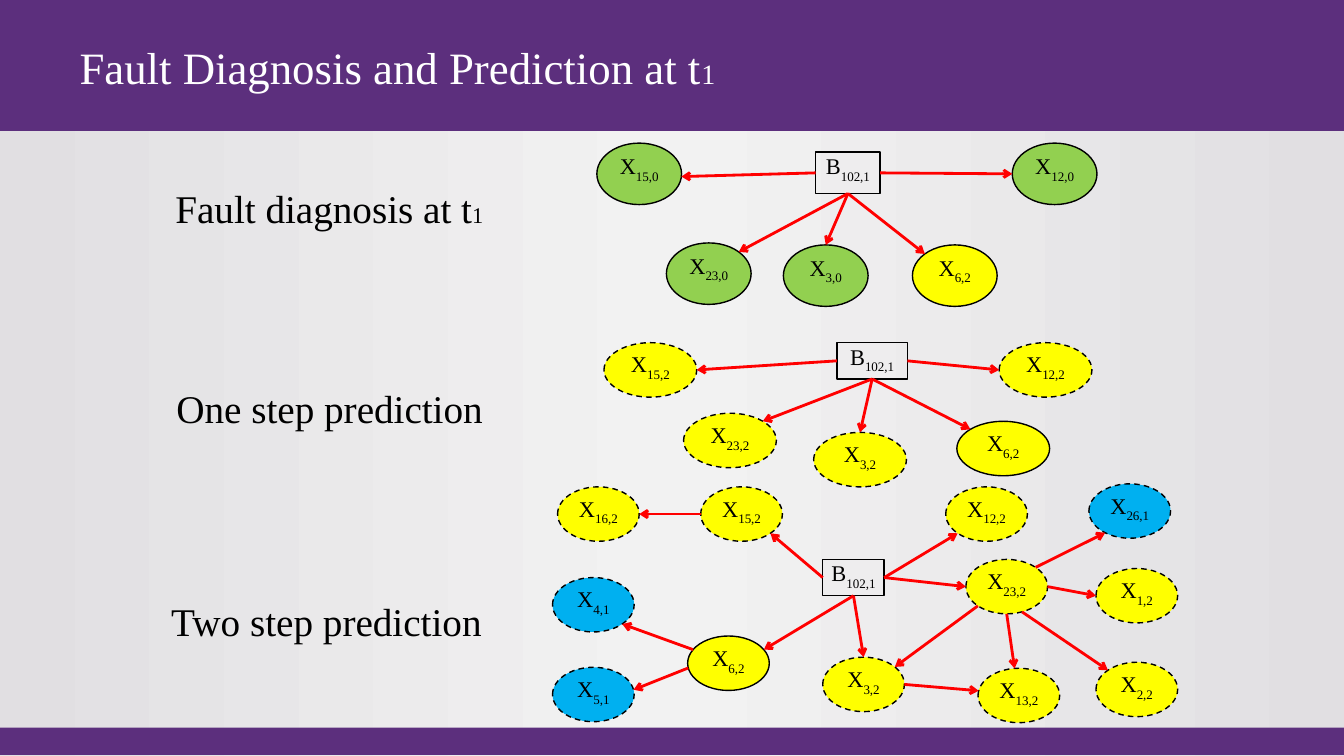
from copy import deepcopy
from dataclasses import dataclass
from math import cos, radians, sin

from lxml.etree import SubElement
from pptx import Presentation
from pptx.dml.color import RGBColor
from pptx.enum.dml import MSO_LINE_DASH_STYLE as Dash
from pptx.enum.shapes import MSO_CONNECTOR as Connector, MSO_SHAPE as Preset
from pptx.enum.text import MSO_ANCHOR as Anchor, PP_ALIGN as Align
from pptx.oxml.ns import qn
from pptx.shapes.autoshape import Shape
from pptx.util import Inches, Pt

PURPLE, BLACK, WHITE, RED = "5C2F7D", "000000", "FFFFFF", "FF0000"
GREEN, YELLOW, BLUE = "92D050", "FFFF00", "00B0F0"
BACKGROUND_STOPS = [(0, "E1DFE2"), (0.5, "F2F2F2"), (1, "E1DFE2")]
NODE_FRAME = dict(margin_left=0, margin_top=0, margin_right=0, margin_bottom=0,
                  vertical_anchor=Anchor.TOP, word_wrap=True)
HUB = "102,1"
HUB_SIDES = {270: 0, 180: 1, 90: 2, 0: 3}


@dataclass
class Heading:
    text: str
    left: float
    top: float
    width: float
    height: float = 0.57
    size: int = 28
    index: str = ""
    index_size: int = 16
    color: str = BLACK


@dataclass
class Node:
    index: str
    left: float
    top: float
    fill: str = YELLOW
    dashed: bool = True


@dataclass
class Arrow:
    """Angles are in degrees, clockwise from the right-hand side."""
    source: str
    leaving: float
    target: str
    arriving: float


@dataclass
class Network:
    hub: tuple[float, float, float, float]
    node_size: tuple[float, float]
    nodes: list[Node]
    arrows: list[Arrow]


HEADINGS = [
    Heading("Fault diagnosis at t", 1.64, 1.78, 3.45, index="1"),
    Heading("One step prediction", 1.65, 3.76, 3.32),
    Heading("Two step prediction", 1.6, 5.88, 3.65),
    Heading("Fault Diagnosis and Prediction at t", 0.69, 0.34, 7.02, 0.64,
            32, "1", 20, WHITE),
]

NETWORKS = [
    Network(
        (8.09, 1.51, 0.64, 0.41), (0.84, 0.61),
        [Node("15,0", 5.92, 1.42, GREEN, False),
         Node("12,0", 10.04, 1.42, GREEN, False),
         Node("6,2", 9.05, 2.43, YELLOW, False),
         Node("23,0", 6.61, 2.41, GREEN, False),
         Node("3,0", 7.77, 2.43, GREEN, False)],
        [Arrow(HUB, 180, "15,0", 5), Arrow(HUB, 0, "12,0", 180),
         Arrow(HUB, 90, "23,0", 315), Arrow(HUB, 90, "6,2", 225),
         Arrow(HUB, 90, "3,0", 270)]),
    Network(
        (8.3, 3.4, 0.7, 0.36), (0.92, 0.54),
        [Node("15,2", 5.99, 3.4), Node("12,2", 9.91, 3.4),
         Node("23,2", 6.78, 4.1), Node("6,2", 9.49, 4.18, dashed=False),
         Node("3,2", 8.07, 4.29)],
        [Arrow(HUB, 180, "15,2", 0), Arrow(HUB, 0, "12,2", 180),
         Arrow(HUB, 90, "23,2", 315), Arrow(HUB, 90, "6,2", 225),
         Arrow(HUB, 90, "3,2", 270)]),
    Network(
        (8.16, 5.55, 0.61, 0.36), (0.81, 0.54),
        [Node("4,1", 5.48, 5.73, BLUE), Node("5,1", 5.48, 6.62, BLUE),
         Node("6,2", 6.82, 6.31, dashed=False), Node("15,2", 6.95, 4.83),
         Node("23,2", 9.58, 5.55), Node("3,2", 8.16, 6.52),
         Node("12,2", 9.38, 4.83), Node("26,1", 10.8, 4.8, BLUE),
         Node("16,2", 5.53, 4.83), Node("1,2", 10.87, 5.64),
         Node("13,2", 9.7, 6.63), Node("2,2", 10.87, 6.57)],
        [Arrow(HUB, 90, "6,2", 330), Arrow(HUB, 180, "15,2", 45),
         Arrow(HUB, 0, "23,2", 180), Arrow(HUB, 0, "12,2", 135),
         Arrow(HUB, 90, "3,2", 270), Arrow("15,2", 180, "16,2", 0),
         Arrow("6,2", 170, "5,1", 350), Arrow("6,2", 210, "4,1", 45),
         Arrow("23,2", 315, "26,1", 127), Arrow("23,2", 0, "1,2", 180),
         Arrow("23,2", 135, "3,2", 320), Arrow("23,2", 68, "2,2", 225),
         Arrow("23,2", 90, "13,2", 264), Arrow("3,2", 0, "13,2", 190)]),
]


def rgb(color: str) -> RGBColor:
    return RGBColor.from_string(color)


def add_run(paragraph, text: str, size: int, color: str = BLACK):
    run = paragraph.add_run()
    run.text = text
    for name, value in dict(name="Times New Roman", size=Pt(size)).items():
        setattr(run.font, name, value)
    run.font.color.rgb = rgb(color)
    return run


def paint_background(slide) -> None:
    fill = slide.background.fill
    fill.gradient()
    fill.gradient_angle = 0
    stops = slide.element.find(".//" + qn("a:gsLst"))
    stops.append(deepcopy(stops[0]))
    for stop, (position, color) in zip(fill.gradient_stops, BACKGROUND_STOPS):
        stop.position = position
        stop.color.rgb = rgb(color)


def add_band(slide, top: float, height: float) -> None:
    band = slide.shapes.add_shape(Preset.RECTANGLE, 0, Inches(top),
                                  Inches(13.33), Inches(height))
    band.shadow.inherit = False
    band.fill.solid()
    band.fill.fore_color.rgb = rgb(PURPLE)
    band.line.fill.background()


def add_heading(slide, heading: Heading) -> None:
    place = (heading.left, heading.top, heading.width, heading.height)
    frame = slide.shapes.add_textbox(*map(Inches, place)).text_frame
    frame.word_wrap = True
    add_run(frame.paragraphs[0], heading.text, heading.size, heading.color)
    if heading.index:
        add_run(frame.paragraphs[0], heading.index, heading.index_size, heading.color)


def add_variable(group, preset, place: tuple, letter: str, index: str,
                 fill: str = "", dashed: bool = False) -> Shape:
    variable = group.shapes.add_shape(preset, *map(Inches, place))
    variable.shadow.inherit = False
    if fill:
        variable.fill.solid()
        variable.fill.fore_color.rgb = rgb(fill)
    else:
        variable.fill.background()
    variable.line.color.rgb = rgb(BLACK)
    variable.line.width = Pt(1)
    if dashed:
        variable.line.dash_style = Dash.DASH
    for name, value in NODE_FRAME.items():
        setattr(variable.text_frame, name, value)
    paragraph = variable.text_frame.paragraphs[0]
    paragraph.alignment = Align.CENTER
    add_run(paragraph, letter, 16)
    add_run(paragraph, index, 16).font._element.set("baseline", "-30000")
    return variable


def rim_point(variable: Shape, angle: float) -> tuple[int, int]:
    turn = radians(angle)
    return (round(variable.left + variable.width * (1 + cos(turn)) / 2),
            round(variable.top + variable.height * (1 + sin(turn)) / 2))


def add_arrow(group, variables: dict[str, Shape], arrow: Arrow) -> None:
    source, target = variables[arrow.source], variables[arrow.target]
    link = group.shapes.add_connector(
        Connector.STRAIGHT, *rim_point(source, arrow.leaving),
        *rim_point(target, arrow.arriving))
    if arrow.source == HUB:
        link.begin_connect(source, HUB_SIDES[arrow.leaving])
    link.line.color.rgb = rgb(RED)
    link.line.width = Pt(2)
    SubElement(link.line._get_or_add_ln(), qn("a:tailEnd"), type="arrow")
    SubElement(link._element.spPr, qn("a:effectLst"))


def add_network(slide, network: Network) -> None:
    group = slide.shapes.add_group_shape()
    variables = {HUB: add_variable(group, Preset.RECTANGLE, network.hub, "B", HUB)}
    for node in network.nodes:
        variables[node.index] = add_variable(
            group, Preset.OVAL, (node.left, node.top, *network.node_size),
            "X", node.index, node.fill, node.dashed)
    for arrow in network.arrows:
        add_arrow(group, variables, arrow)


def main() -> None:
    deck = Presentation()
    deck.slide_width, deck.slide_height = Inches(13.33), Inches(7.5)
    slide = deck.slides.add_slide(deck.slide_layouts[6])
    paint_background(slide)
    add_band(slide, 0, 1.3)
    add_band(slide, 7.22, 0.27)
    for heading in HEADINGS:
        add_heading(slide, heading)
    for network in NETWORKS:
        add_network(slide, network)
    deck.save("out.pptx")


if __name__ == "__main__":
    main()
